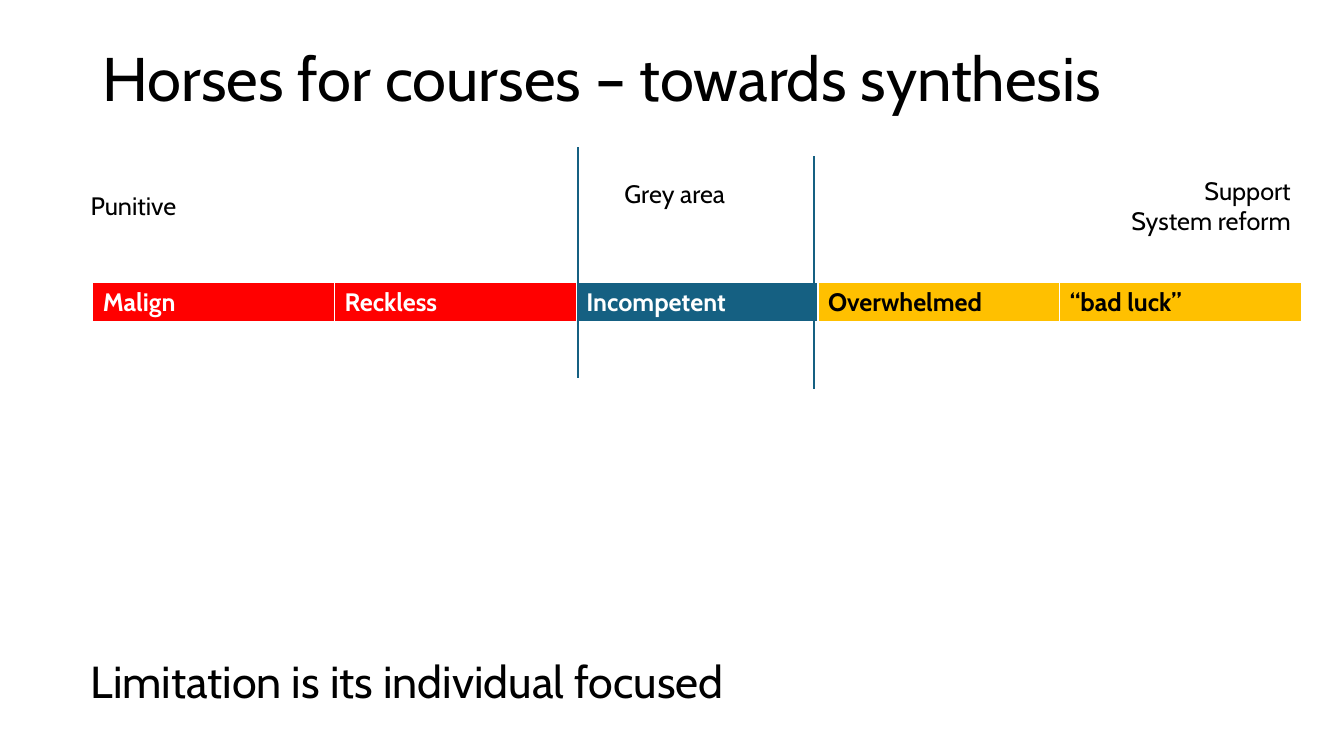
import pptx
import pptx.util
import pptx.dml.color
import pptx.enum.shapes
import pptx.enum.text
import pptx.oxml
import pptx.oxml.ns

Inches = pptx.util.Inches
Pt = pptx.util.Pt
ALIGN = pptx.enum.text.PP_ALIGN
ANCHOR = pptx.enum.text.MSO_ANCHOR

THEME = {
    "font": "Cabin",
    "black": "000000", "white": "FFFFFF",
    "red": "FF0000", "teal": "156082", "amber": "FFC000",
    "title": 44, "remark": 32, "label": 18,
    "divider": 1.5,
}

# lines, (left, top, width, height), size, alignment, wrap
TITLE = (["Horses for courses – towards synthesis"],
         (0.92, 0.4, 11.5, 0.81), "title", ALIGN.LEFT, True)
LABELS = [
    (["Limitation is its individual focused"],
     (0.8, 6.44, 7.39, 0.64), "remark", ALIGN.LEFT, True),
    (["Punitive"], (0.8, 1.84, 1.06, 0.4), "label", ALIGN.LEFT, False),
    (["Support", "System reform"],
     (11.12, 1.69, 1.78, 0.71), "label", ALIGN.RIGHT, False),
    (["Grey area"], (6.05, 1.72, 1.24, 0.4), "label", ALIGN.RIGHT, False),
]
SPECTRUM = [  # behaviour, fill, text colour
    ("Malign", "red", "white"),
    ("Reckless", "red", "white"),
    ("Incompetent", "teal", "white"),
    ("Overwhelmed", "amber", "black"),
    ("“bad luck”", "amber", "black"),
]
SPECTRUM_AT = (0.92, 2.8, 11.99, 0.37)
DIVIDERS = [(5.73, 1.46, 3.75), (8.07, 1.55, 3.86)]  # x, top, bottom
BORDERS = {"lnL": 1, "lnR": 1, "lnT": 1, "lnB": 3}


def color(name):
    return pptx.dml.color.RGBColor.from_string(THEME[name])


def add_span(para, text, size, ink="black", bold=False):
    span = para.add_run()
    span.text = text
    span.font.name = THEME["font"]
    span.font.size = Pt(THEME[size])
    span.font.color.rgb = color(ink)
    span.font.bold = bold


def add_label(page, lines, place, size, align, wrap):
    box = page.shapes.add_textbox(*map(Inches, place))
    frame = box.text_frame
    frame.word_wrap = wrap
    for index, line in enumerate(lines):
        para = frame.add_paragraph() if index else frame.paragraphs[0]
        para.alignment = align
        add_span(para, line, size)
    return frame


def add_borders(cell):
    properties = cell._tc.get_or_add_tcPr()
    # Borders have to come before the fill in the cell properties.
    for position, (side, width) in enumerate(BORDERS.items()):
        properties.insert(position, pptx.oxml.parse_xml(
            f'<a:{side} {pptx.oxml.ns.nsdecls("a")} w="{Pt(width)}">'
            f'<a:solidFill><a:srgbClr val="{THEME["white"]}"/></a:solidFill>'
            f'</a:{side}>'))


def add_spectrum(page):
    left, top, width, height = map(Inches, SPECTRUM_AT)
    table = page.shapes.add_table(
        1, len(SPECTRUM), left, top, width, height).table
    for index, (text, fill, ink) in enumerate(SPECTRUM):
        table.columns[index].width = width // len(SPECTRUM)
        cell = table.cell(0, index)
        cell.fill.solid()
        cell.fill.fore_color.rgb = color(fill)
        add_span(cell.text_frame.paragraphs[0], text, "label", ink, True)
        add_borders(cell)


def add_divider(page, x, top, bottom):
    line = page.shapes.add_connector(
        pptx.enum.shapes.MSO_CONNECTOR.STRAIGHT,
        *map(Inches, (x, top, x, bottom)))
    line.line.color.rgb = color("teal")
    line.line.width = Pt(THEME["divider"])
    line._element.spPr.append(pptx.oxml.parse_xml(
        f'<a:effectLst {pptx.oxml.ns.nsdecls("a")}/>'))


def main():
    deck = pptx.Presentation()
    deck.slide_width, deck.slide_height = Inches(13.33), Inches(7.5)
    page = deck.slides.add_slide(deck.slide_layouts[6])
    title = add_label(page, *TITLE)
    title.vertical_anchor = ANCHOR.MIDDLE
    title.paragraphs[0].line_spacing = 0.9
    add_spectrum(page)
    for divider in DIVIDERS:
        add_divider(page, *divider)
    for label in LABELS:
        add_label(page, *label)
    deck.save("out.pptx")


if __name__ == "__main__":
    main()
